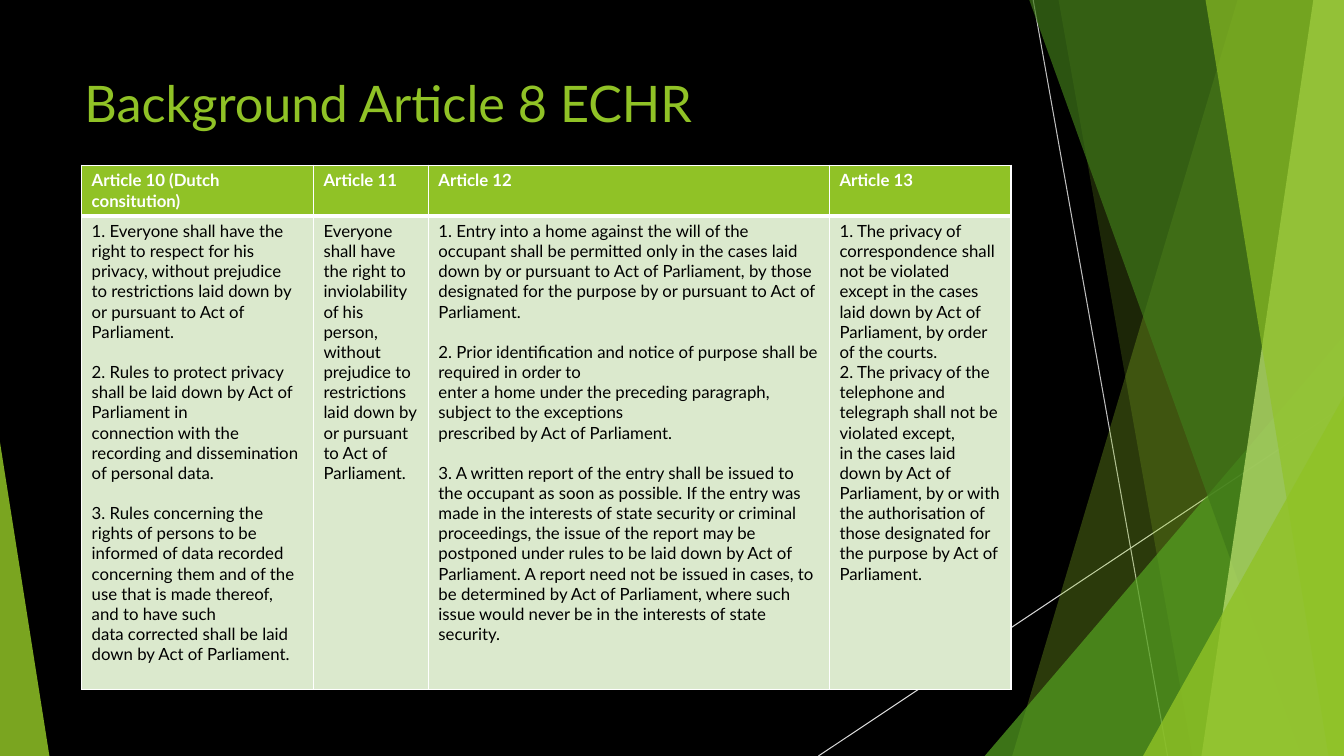
from lxml import etree
from pptx import Presentation
from pptx.dml.color import RGBColor
from pptx.enum.shapes import MSO_CONNECTOR, MSO_SHAPE
from pptx.enum.text import MSO_ANCHOR
from pptx.oxml.ns import qn
from pptx.util import Pt

STRAIGHT = MSO_CONNECTOR.STRAIGHT
TRIANGLE = MSO_SHAPE.ISOSCELES_TRIANGLE
TOP = MSO_ANCHOR.TOP

WIDTH, HEIGHT = 960, 540
FONT = "Lato"
LINE_HEIGHT = 14.4
GREEN, WHITE, BLACK, PALE = "90C226", "FFFFFF", "000000", "DBE9CD"

TITLE = "Background Article 8 ECHR"

# Each article: heading, column width, sections of paragraphs
ARTICLES = [
    ("Article 10 (Dutch consitution)", 165.6, [
        ["1. Everyone shall have the right to respect for his privacy, without prejudice",
         "to restrictions laid down by or pursuant to Act of Parliament."],
        ["2. Rules to protect privacy shall be laid down by Act of Parliament in",
         "connection with the recording and dissemination of personal data."],
        ["3. Rules concerning the rights of persons to be informed of data recorded",
         "concerning them and of the use that is made thereof, and to have such",
         "data corrected shall be laid down by Act of Parliament."],
    ]),
    ("Article 11", 82.1, [
        ["Everyone shall have the right to inviolability of his person, without",
         "prejudice to restrictions laid down by or pursuant to Act of Parliament."],
    ]),
    ("Article 12", 286.5, [
        ["1. Entry into a home against the will of the occupant shall be permitted only in "
         "the cases laid down by or pursuant to Act of Parliament, by those designated for "
         "the purpose by or pursuant to Act of Parliament."],
        ["2. Prior identification and notice of purpose shall be required in order to",
         "enter a home under the preceding paragraph, subject to the exceptions",
         "prescribed by Act of Parliament."],
        ["3. A written report of the entry shall be issued to the occupant as soon as "
         "possible. If the entry was made in the interests of state security or criminal "
         "proceedings, the issue of the report may be postponed under rules to be laid down "
         "by Act of Parliament. A report need not be issued in cases, to be determined by "
         "Act of Parliament, where such issue would never be in the interests of state "
         "security."],
    ]),
    ("Article 13", 129.6, [
        ["1. The privacy of correspondence shall not be violated except in the cases",
         "laid down by Act of Parliament, by order of the courts.",
         "2. The privacy of the telephone and telegraph shall not be violated except,",
         "in the cases laid down by Act of Parliament, by or with the authorisation of",
         "those designated for the purpose by Act of Parliament."],
    ]),
]
ROW_HEIGHTS = [36, 338.4]

RAYS = [((738, 0), (834, 540), "BFBFBF"), ((960, 290), (584.6, 540), "D9D9D9")]

FACETS = [
    ("band", (884.2, 723), GREEN, 30),
    ("band", (756, 851.8), GREEN, 20),
    ("triangle", (703.4, 239.8, 256.6, 1), "54A021", 72),
    ("band", (735, 929.5), "3F7819", 70),
    ("band", (938.2, 858.2), "C0E474", 70),
    ("band", (861, 949), GREEN, 65),
    ("triangle", (816.5, 283, 143.5, 1), GREEN, 80),
    ("triangle", (0, 316, 35.3, 0), GREEN, 85),
]


def color(value):
    return RGBColor.from_string(value)


def write(frame, sections, size=12, ink=BLACK, bold=False):
    frame.word_wrap = True
    first = True
    for number, section in enumerate(sections):
        for position, text in enumerate(section):
            paragraph = frame.paragraphs[0] if first else frame.add_paragraph()
            first = False
            if number and position == 0:
                paragraph.space_before = Pt(LINE_HEIGHT)
            run = paragraph.add_run()
            run.text = text
            run.font.name = FONT
            run.font.size = Pt(size)
            run.font.bold = bold
            run.font.color.rgb = color(ink)


def draw_ray(slide, start, end, ink):
    ray = slide.shapes.add_connector(STRAIGHT, *map(Pt, start + end))
    ray.line.color.rgb = color(ink)
    ray.line.width = Pt(0.75)
    etree.SubElement(ray._element.spPr, qn("a:effectLst"))


def draw_facet(slide, kind, geometry, tint, opacity):
    if kind == "band":
        upper, lower = geometry
        corners = [(upper, -0.7), (WIDTH, -0.7), (WIDTH, HEIGHT), (lower, HEIGHT)]
        points = [(Pt(x), Pt(y)) for x, y in corners]
        builder = slide.shapes.build_freeform(*points[0])
        builder.add_line_segments(points[1:], close=True)
        facet = builder.convert_to_shape()
    else:
        left, top, width, apex = geometry
        facet = slide.shapes.add_shape(
            TRIANGLE, Pt(left), Pt(top), Pt(width), Pt(HEIGHT - top))
        facet.adjustments[0] = apex
    facet.shadow.inherit = False
    facet.line.fill.background()
    facet.fill.solid()
    facet.fill.fore_color.rgb = color(tint)
    tint_element = facet._element.spPr.find(qn("a:solidFill"))[0]
    etree.SubElement(tint_element, qn("a:alpha"), val=str(opacity * 1000))


def style_cell(cell, tint, top_width, bottom_width):
    properties = cell._tc.get_or_add_tcPr()
    for side, width in (("L", 1), ("R", 1), ("T", top_width), ("B", bottom_width)):
        border = etree.SubElement(properties, qn("a:ln" + side), w=str(Pt(width)))
        ink = etree.SubElement(border, qn("a:solidFill"))
        etree.SubElement(ink, qn("a:srgbClr"), val=WHITE)
    cell.fill.solid()
    cell.fill.fore_color.rgb = color(tint)


def draw_articles(slide):
    total = sum(width for _, width, _ in ARTICLES)
    table = slide.shapes.add_table(
        len(ROW_HEIGHTS), len(ARTICLES), Pt(58.3), Pt(118.1),
        Pt(total), Pt(sum(ROW_HEIGHTS))).table
    for row, height in zip(table.rows, ROW_HEIGHTS):
        row.height = Pt(height)
    for column, (heading, width, sections) in enumerate(ARTICLES):
        table.columns[column].width = Pt(width)
        head, body = table.cell(0, column), table.cell(1, column)
        style_cell(head, GREEN, 1, 3)
        style_cell(body, PALE, 3, 1)
        write(head.text_frame, [[heading]], ink=WHITE, bold=True)
        write(body.text_frame, sections)


def main():
    deck = Presentation()
    deck.slide_width, deck.slide_height = Pt(WIDTH), Pt(HEIGHT)
    slide = deck.slides.add_slide(deck.slide_layouts[6])
    slide.background.fill.solid()
    slide.background.fill.fore_color.rgb = color(BLACK)
    for ray in RAYS:
        draw_ray(slide, *ray)
    for facet in FACETS:
        draw_facet(slide, *facet)
    title = slide.shapes.add_textbox(Pt(53.3), Pt(48.2), Pt(676.8), Pt(103.7))
    title.text_frame.vertical_anchor = TOP
    write(title.text_frame, [[TITLE]], size=36, ink=GREEN)
    draw_articles(slide)
    deck.save("out.pptx")


if __name__ == "__main__":
    main()
